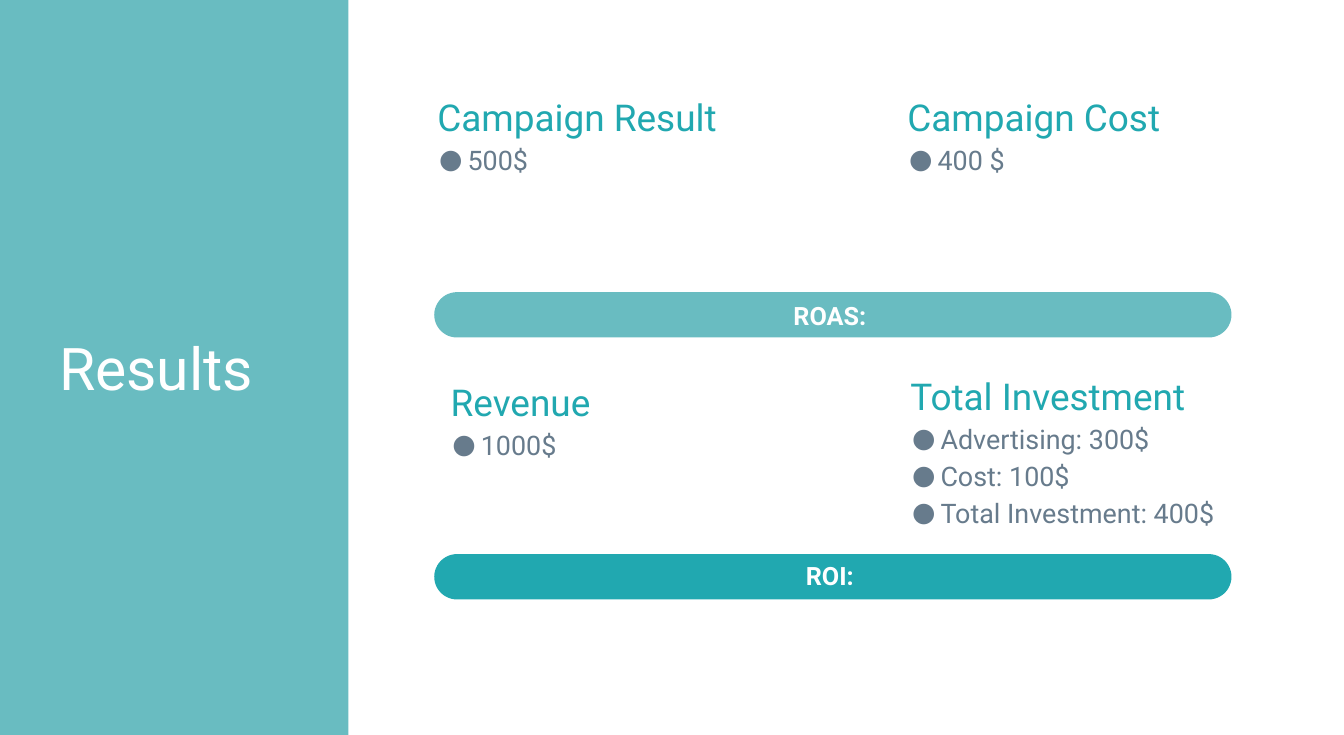
"""Build the campaign results slide with ROAS and ROI bars."""
from lxml import etree
from pptx import Presentation
from pptx.dml.color import RGBColor
from pptx.enum.shapes import MSO_SHAPE
from pptx.enum.text import MSO_ANCHOR, PP_ALIGN
from pptx.oxml.ns import qn
from pptx.util import Inches, Pt

RECT, PILL = MSO_SHAPE.RECTANGLE, MSO_SHAPE.ROUNDED_RECTANGLE
TOP, MIDDLE = MSO_ANCHOR.TOP, MSO_ANCHOR.MIDDLE
LEFT, CENTER = PP_ALIGN.LEFT, PP_ALIGN.CENTER

WIDE, HIGH = Inches(22.22), Inches(12.15)
INSET = Inches(0.22)
HUES = {"pale": "69BCC1", "teal": "21A8B0", "slate": "677B8C", "white": "FFFFFF"}
STYLES = {
    "title": ({"size": Pt(70), "bold": False}, "white"),
    "head": ({"size": Pt(44), "bold": False}, "teal"),
    "item": ({"size": Pt(32), "bold": False}, "slate"),
    "label": ({"size": Pt(30), "bold": True}, "white"),
}
CARDS = [
    ((31.55, 7.98, 33.98, 30.45), "Campaign Result", ["500$"]),
    ((66.52, 7.98, 30.15, 22.96), "Campaign Cost", ["400 $"]),
    ((32.54, 46.75, 33.98, 30.45), "Revenue", ["1000$"]),
    ((66.74, 45.93, 33.2, 30.45), "Total Investment",
     ["Advertising: 300$", "Cost: 100$", "Total Investment: 400$"]),
]
BARS = [("ROAS:", 39.75, 40.58, "pale"), ("ROI:", 75.39, 75.97, "teal")]


def place(area):
    """Turn percentages of the slide into lengths."""
    return [int(part * side / 100) for part, side in zip(area, (WIDE, HIGH) * 2)]


def paint(slide, kind, area, hue):
    """Add a plain filled shape."""
    shape = slide.shapes.add_shape(kind, *place(area))
    shape.shadow.inherit = False
    shape.fill.solid()
    shape.fill.fore_color.rgb = RGBColor.from_string(HUES[hue])
    shape.line.fill.background()
    return shape


def frame(slide, area, anchor):
    """Add a wrapping text box with even insets."""
    text = slide.shapes.add_textbox(*place(area)).text_frame
    looks = {"word_wrap": True, "vertical_anchor": anchor}
    looks.update({f"margin_{side}": INSET for side in ("left", "right", "top", "bottom")})
    for name, value in looks.items():
        setattr(text, name, value)
    return text


def write(para, words, style, align=LEFT, space=1.0):
    """Put one styled run in a paragraph."""
    para.alignment, para.line_spacing = align, space
    run = para.add_run()
    run.text = words
    looks, hue = STYLES[style]
    for name, value in {"name": "Roboto", **looks}.items():
        setattr(run.font, name, value)
    run.font.color.rgb = RGBColor.from_string(HUES[hue])


def bullet(para):
    """Give a paragraph a hanging round bullet."""
    props = para._p.get_or_add_pPr()
    props.set("marL", str(Inches(0.5)))
    props.set("indent", str(Inches(-0.47)))
    tint = etree.SubElement(props, qn("a:buClr"))
    etree.SubElement(tint, qn("a:srgbClr"), val=HUES["slate"])
    etree.SubElement(props, qn("a:buFont"), typeface="Roboto")
    etree.SubElement(props, qn("a:buChar"), char="●")


def card(slide, area, head, items):
    """Add a heading with its bulleted figures."""
    text = frame(slide, area, TOP)
    write(text.paragraphs[0], head, "head", space=1.5)
    for item in items:
        para = text.add_paragraph()
        bullet(para)
        write(para, item, "item", space=1.15)


def bar(slide, words, top, base, hue):
    """Add a pill with a centred label."""
    pill = paint(slide, PILL, (32.31, top, 59.32, 6.17), hue)
    pill.adjustments[0] = 0.5
    text = frame(slide, (46.13, base, 31.23, 4.61), MIDDLE)
    write(text.paragraphs[0], words, "label", CENTER)


def main():
    """Assemble and save the slide."""
    deck = Presentation()
    deck.slide_width, deck.slide_height = WIDE, HIGH
    slide = deck.slides.add_slide(deck.slide_layouts[6])
    paint(slide, RECT, (0, 0, 25.92, 100), "pale")
    title = frame(slide, (3.42, 33.66, 20.39, 32.59), MIDDLE)
    write(title.paragraphs[0], "Results", "title")
    for row in BARS:
        bar(slide, *row)
    for row in CARDS:
        card(slide, *row)
    deck.save("out.pptx")


if __name__ == "__main__":
    main()
